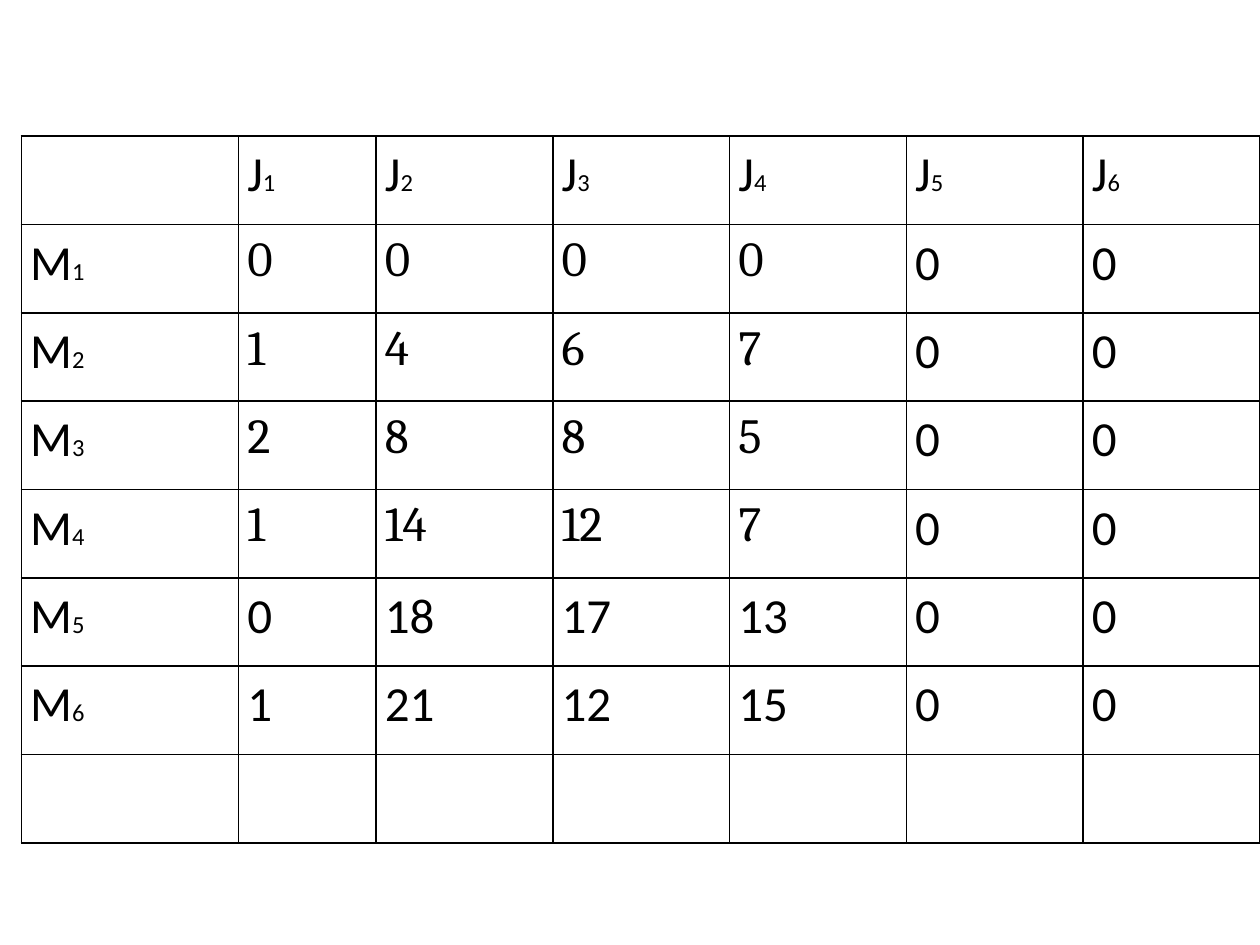
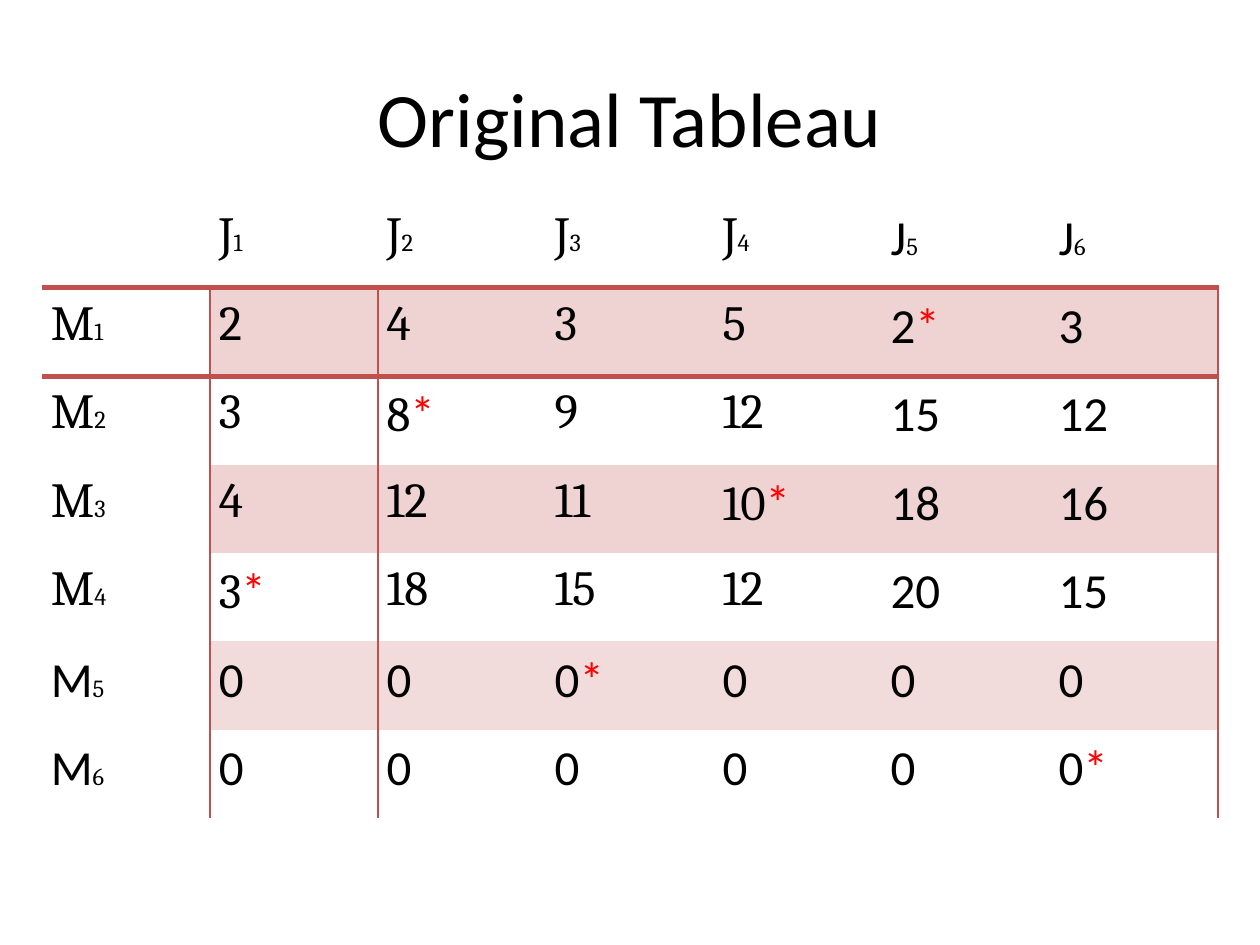
from dataclasses import dataclass
from typing import Callable

from lxml.etree import SubElement
from pptx import Presentation
from pptx.dml.color import RGBColor
from pptx.enum.text import MSO_ANCHOR, PP_ALIGN
from pptx.oxml.ns import qn
from pptx.util import Inches, Pt

# Shared look
WIDE, HIGH = 10, 7.5
SANS, SERIF = "Calibri", "Cambria"
BLACK, WHITE, RED, BRICK = "000000", "FFFFFF", "FF0000", "C0504D"
ROSE, PALE = "EFD3D2", "F2DCDB"
BIG, SMALL, TITLE = 28, 14, 44
PLAIN = "{2D5ABB26-0587-4C30-8999-92F81FD0307C}"  # table style: no grid
JOBS = 6

Edges = dict[str, tuple[str, float]]


@dataclass
class Grid:
    left: float  # the box, as shares of the slide
    top: float
    width: float
    height: float
    cols: list[float]  # column weights
    rows: list[str]  # numbers; a star marks a chosen one
    spare: int  # empty rows at the end
    sub: str  # font of the index digits
    font: Callable[[int, int], str]
    fill: Callable[[int, int], str]
    edges: Callable[[int, int], Edges]


def color(code: str) -> RGBColor:
    return RGBColor.from_string(code)


def draw_edges(cell, edges: Edges) -> None:
    props = cell._tc.get_or_add_tcPr()
    for side in "LRTB":
        if side in edges:
            code, width = edges[side]
            line = SubElement(props, qn(f"a:ln{side}"), w=str(Pt(width)))
            fill = SubElement(line, qn("a:solidFill"))
            SubElement(fill, qn("a:srgbClr"), val=code)


def write(cell, text: str, font: str, sub: str) -> None:
    """Write a number, a starred number, or a letter with its index."""
    para = cell.text_frame.paragraphs[0]
    para.line_spacing = 1.15
    para.font.name, para.font.size = font, Pt(BIG)
    para.font.color.rgb = color(BLACK)
    head = text[:1] if text[:1].isalpha() else text.rstrip("*")
    tail = text[len(head):]
    if head:
        para.add_run().text = head
    if tail:
        run = para.add_run()
        run.text = tail
        if tail == "*":
            run.font.name, run.font.color.rgb = SANS, color(RED)
        else:
            run.font.name, run.font.size = sub, Pt(SMALL)


def draw_grid(slide, grid: Grid) -> None:
    lines = [["", *(f"J{j + 1}" for j in range(JOBS))]]
    lines += [[f"M{i + 1}", *row.split()] for i, row in enumerate(grid.rows)]
    lines += [[""] * (JOBS + 1)] * grid.spare
    width, height = Inches(grid.width * WIDE), Inches(grid.height * HIGH)
    frame = slide.shapes.add_table(
        len(lines), JOBS + 1, Inches(grid.left * WIDE),
        Inches(grid.top * HIGH), width, height)
    table = frame.table
    table.first_row = table.horz_banding = False
    for style in frame._element.iter(qn("a:tableStyleId")):
        style.text = PLAIN
    for col, part in zip(table.columns, grid.cols):
        col.width = int(width * part / sum(grid.cols))
    for r, line in enumerate(lines):
        table.rows[r].height = height // len(lines)
        for c, text in enumerate(line):
            cell = table.cell(r, c)
            cell.margin_left = cell.margin_right = Inches(0.07)
            cell.margin_top = cell.margin_bottom = 0
            draw_edges(cell, grid.edges(r, c))
            cell.fill.solid()
            cell.fill.fore_color.rgb = color(grid.fill(r, c))
            write(cell, text, grid.font(r, c), grid.sub)


def set_title(slide, text: str) -> None:
    shape = slide.shapes.title
    shape.left, shape.top = Inches(0.05 * WIDE), Inches(0.04 * HIGH)
    shape.width, shape.height = Inches(0.9 * WIDE), Inches(HIGH / 6)
    frame = shape.text_frame
    frame.text, frame.vertical_anchor = text, MSO_ANCHOR.MIDDLE
    para = frame.paragraphs[0]
    para.alignment = PP_ALIGN.CENTER
    para.font.name, para.font.size = SANS, Pt(TITLE)
    para.font.color.rgb = color(BLACK)


# Rules of the ruled grid
def rule_font(r: int, c: int) -> str:
    return SERIF if 1 <= r <= 4 and 1 <= c <= 4 else SANS


def rule_edges(r: int, c: int) -> Edges:
    return {side: (BLACK, 1) for side in "LRTB"}


# Rules of the banded grid
def band_font(r: int, c: int) -> str:
    return SERIF if r <= 4 and c <= 4 else SANS


def band_fill(r: int, c: int) -> str:
    if c == 0 or r % 2 == 0:
        return WHITE
    return ROSE if r <= 4 else PALE


def band_edges(r: int, c: int) -> Edges:
    if r == 0:
        return {"B": (BRICK, 3)}
    edges: Edges = {"T": (BRICK, 3)} if r == 1 else {}
    if c == 1:
        edges["L"] = (BRICK, 1)
    if c in (0, JOBS):
        edges["R"] = (BRICK, 1)
    return edges


RULED = Grid(
    0.017, 0.144, 0.983, 0.748, [1.72, 1.09] + [1.4] * 5,
    ["0 0 0 0 0 0", "1 4 6 7 0 0", "2 8 8 5 0 0",
     "1 14 12 7 0 0", "0 18 17 13 0 0", "1 21 12 15 0 0"],
    1, SANS, rule_font, lambda r, c: WHITE, rule_edges)

BANDED = Grid(
    1 / 30, 0.211, 28 / 30, 0.655, [1] * 7,
    ["2 4 3 5 2* 3", "3 8* 9 12 15 12", "4 12 11 10* 18 16",
     "3* 18 15 12 20 15", "0 0 0* 0 0 0", "0 0 0 0 0 0*"],
    0, SERIF, band_font, band_fill, band_edges)


def main() -> None:
    deck = Presentation()
    deck.slide_width, deck.slide_height = Inches(WIDE), Inches(HIGH)
    bare, titled = deck.slide_layouts[6], deck.slide_layouts[5]

    # Slide 1: ruled table
    draw_grid(deck.slides.add_slide(bare), RULED)

    # Slide 2: banded table under a title
    slide = deck.slides.add_slide(titled)
    set_title(slide, "Original Tableau")
    draw_grid(slide, BANDED)

    deck.save("out.pptx")


if __name__ == "__main__":
    main()
